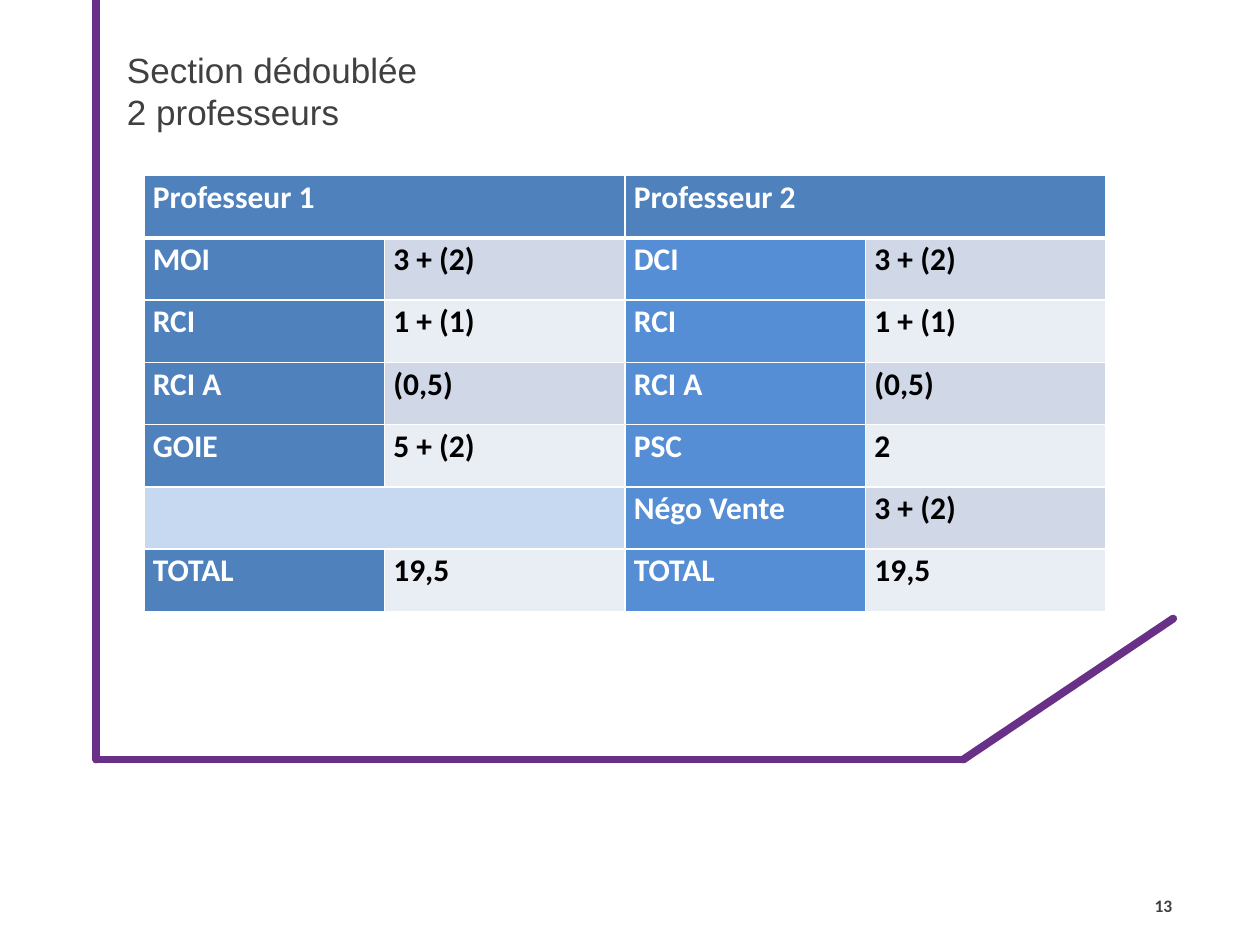
from lxml.etree import SubElement
from pptx import Presentation
from pptx.dml.color import RGBColor
from pptx.enum.shapes import MSO_CONNECTOR
from pptx.enum.text import MSO_ANCHOR, PP_ALIGN
from pptx.oxml.ns import qn
from pptx.util import Cm, Pt

WHITE = RGBColor(0xFF, 0xFF, 0xFF)
BLACK = RGBColor(0, 0, 0)
GREY = RGBColor(0x40, 0x40, 0x40)
PURPLE = RGBColor(0x68, 0x30, 0x86)
BLUE = RGBColor(0x4F, 0x81, 0xBD)
BRIGHT = RGBColor(0x55, 0x8E, 0xD5)
PALE = RGBColor(0xC6, 0xD9, 0xF1)
BANDS = [RGBColor(0xD0, 0xD8, 0xE8), RGBColor(0xE9, 0xED, 0xF4)]

ROWS = [
    ["Professeur 1", "", "Professeur 2", ""],
    ["MOI", "3 + (2)", "DCI", "3 + (2)"],
    ["RCI", "1 + (1)", "RCI", "1 + (1)"],
    ["RCI A", "(0,5)", "RCI A", "(0,5)"],
    ["GOIE", "5 + (2)", "PSC", "2"],
    ["", "", "Négo Vente", "3 + (2)"],
    ["TOTAL", "19,5", "TOTAL", "19,5"],
]
GAP = 5  # row whose left half is empty


def add_text(text, left, top, width, height, font, size, bold, align):
    box = slide.shapes.add_textbox(Cm(left), Cm(top), Cm(width), Cm(height))
    frame = box.text_frame
    frame.word_wrap = True
    frame.vertical_anchor = MSO_ANCHOR.MIDDLE
    para = frame.paragraphs[0]
    para.text = text
    para.alignment = align
    for run in para.runs:
        run.font.name = font
        run.font.size = Pt(size)
        run.font.bold = bold
        run.font.color.rgb = GREY


def add_edge(cell, side, width):
    edge = SubElement(cell._tc.get_or_add_tcPr(), qn("a:ln" + side), w=str(Pt(width)))
    fill = SubElement(edge, qn("a:solidFill"))
    SubElement(fill, qn("a:srgbClr"), val=str(WHITE))


deck = Presentation()
deck.slide_width, deck.slide_height = Cm(25.4), Cm(19.05)
slide = deck.slides.add_slide(deck.slide_layouts[6])

# Purple frame
corners = [(1.94, 0), (1.94, 15.31), (19.42, 15.31), (23.65, 12.47)]
for start, end in zip(corners, corners[1:]):
    line = slide.shapes.add_connector(
        MSO_CONNECTOR.STRAIGHT, *[Cm(v) for v in start + end])
    line.line.color.rgb = PURPLE
    line.line.width = Pt(4.5)
    line.line._get_or_add_ln().set("cap", "rnd")
    SubElement(line._element.spPr, qn("a:effectLst"))

# Title and page number
add_text("Section dédoublée\v2 professeurs", 2.31, 0.13, 21.59, 3.4,
         "Arial", 20, False, PP_ALIGN.LEFT)
add_text("13", 22.76, 17.75, 1.12, 1.02, "Calibri", 10, True, PP_ALIGN.RIGHT)

# Timetable
table = slide.shapes.add_table(
    len(ROWS), 4, Cm(2.9), Cm(3.54), Cm(19.4), Cm(8.79)).table
for r, row in enumerate(ROWS):
    for c, text in enumerate(row):
        cell = table.cell(r, c)
        for side in "LRTB":
            thick = (r == 0 and side == "B") or (r == 1 and side == "T")
            add_edge(cell, side, 3 if thick else 1)
        label = r == 0 or c % 2 == 0
        cell.fill.solid()
        if r == GAP and c < 2:
            tint = PALE
        elif not label:
            tint = BANDS[(r - 1) % 2]
        else:
            tint = BRIGHT if r and c == 2 else BLUE
        cell.fill.fore_color.rgb = tint
        cell.margin_left = cell.margin_right = Cm(0.18)
        cell.margin_top = cell.margin_bottom = 0
        if not text:
            continue
        para = cell.text_frame.paragraphs[0]
        para.text = text
        para.line_spacing = 1.07
        font = para.runs[0].font
        font.name = "Calibri"
        font.size = Pt(18)
        font.bold = True
        font.color.rgb = WHITE if label else BLACK

# Wide cells
for r, c in [(0, 0), (0, 2), (GAP, 0)]:
    table.cell(r, c).merge(table.cell(r, c + 1))

deck.save("out.pptx")
